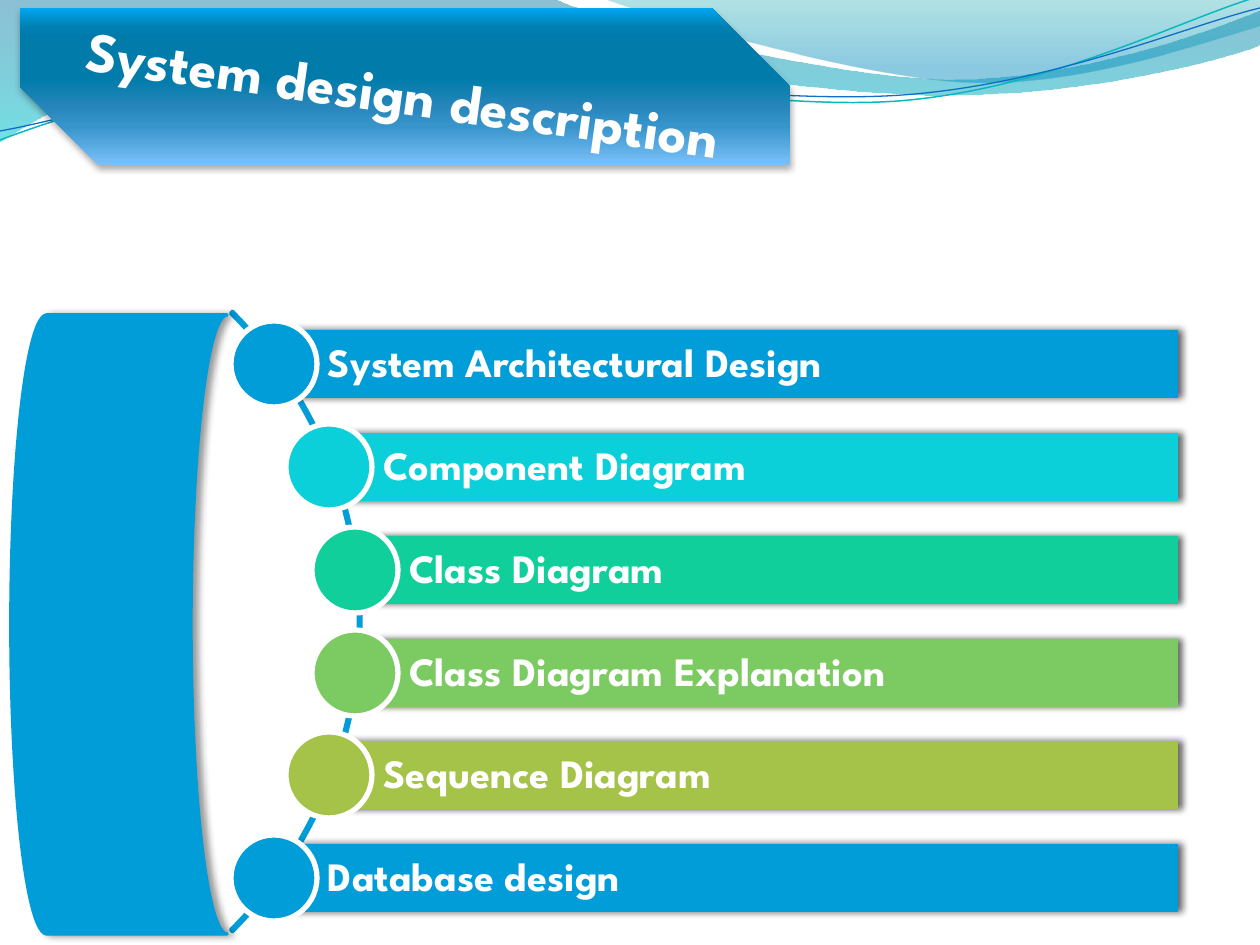
from lxml import etree
from pptx import Presentation
from pptx.dml.color import RGBColor
from pptx.enum.shapes import MSO_SHAPE
from pptx.enum.text import MSO_ANCHOR, PP_ALIGN
from pptx.oxml.ns import qn
from pptx.util import Emu, Pt

RECT, OVAL, ARC = MSO_SHAPE.RECTANGLE, MSO_SHAPE.OVAL, MSO_SHAPE.BLOCK_ARC
DRUM, PLATE = MSO_SHAPE.FLOWCHART_STORED_DATA, MSO_SHAPE.SNIP_2_DIAG_RECTANGLE
LEFT, CENTER, MIDDLE = PP_ALIGN.LEFT, PP_ALIGN.CENTER, MSO_ANCHOR.MIDDLE
SCALE = 914400 / 126
FONT = "League Spartan"
COLORS = {
    "white": "FFFFFF", "black": "000000", "blue": "009DD9", "cyan": "0BD0D9",
    "mint": "10CF9B", "green": "7CCA62", "olive": "A5C249",
    "teal line": "0AB8BF", "navy line": "0F6FC6",
}
# Gradient stops: position, colour, opacity (percent)
BAND = [(0, "0074A1", 45), (100, "00C6CF", 55)]
CREST = [(0, "00A1A9", 30), (80, "008BBF", 45)]
SHEEN = [(0, "7BC0F9", 100), (25, "3694CA", 100), (38, "2685BA", 100),
         (55, "007BAA", 100), (80, "007AA9", 100), (88, "0080B2", 100),
         (100, "00A7F1", 100)]
# Wave paths: a pair is a straight step, six numbers are a cubic curve
BAND_PATH = [(0, 0), (554, -1), (600, 21, 837, 79, 955, 79),
             (1074, 79, 1207, 33, 1260, 11), (1261, 45),
             (1239, 55, 1096, 96, 940, 95), (784, 95, 481, 35, 324, 43),
             (163, 45, 58, 105, -1, 142)]
CREST_PATH = [(604, -1), (642, 14, 859, 78, 969, 82),
              (1079, 87, 1211, 40, 1260, 26), (1260, 0)]
TEAL_PATH = [(0, 140), (60, 117, 199, 72, 349, 66),
             (498, 59, 747, 112, 898, 101), (1050, 89, 1182, 19, 1257, -3)]
NAVY_PATH = [(0, 131), (59, 121, 207, 77, 357, 71),
             (508, 64, 752, 106, 903, 95), (1053, 84, 1186, 26, 1260, 8)]
# Rows: text, colour, left edge of the bar
ROWS = [
    ("System Architectural Design", "blue", 274),
    ("Component Diagram", "cyan", 329),
    ("Class Diagram", "mint", 355),
    ("Class Diagram Explanation", "green", 355),
    ("Sequence Diagram", "olive", 329),
    ("Database design", "blue", 274),
]
TOP, PITCH, RIGHT, BAR, DOT = 330.2, 102.8, 1178, 68, 86


def px(n):
    return Emu(round(n * SCALE))


def rgb(name):
    return RGBColor.from_string(COLORS[name])


def style(shape, fill=None, line=None, width=0):
    shape.shadow.inherit = False
    if fill:
        shape.fill.solid()
        shape.fill.fore_color.rgb = rgb(fill)
    else:
        shape.fill.background()
    if line:
        shape.line.color.rgb = rgb(line)
        shape.line.width = Pt(width)
    else:
        shape.line.fill.background()


def add_form(slide, kind, box, fill=None, line=None, width=0):
    shape = slide.shapes.add_shape(kind, *map(px, box))
    style(shape, fill, line, width)
    return shape


def tint(node, color, alpha):
    item = etree.SubElement(node, qn("a:srgbClr"), val=color)
    if alpha < 100:
        etree.SubElement(item, qn("a:alpha"), val=str(alpha * 1000))


def blend(shape, stops, angle):
    """Replace the empty fill by a linear gradient."""
    old = shape.element.spPr.find(qn("a:noFill"))
    grad = etree.Element(qn("a:gradFill"), rotWithShape="1")
    group = etree.SubElement(grad, qn("a:gsLst"))
    for pos, color, alpha in stops:
        tint(etree.SubElement(group, qn("a:gs"), pos=str(pos * 1000)), color, alpha)
    etree.SubElement(grad, qn("a:lin"), ang=str(angle * 60000), scaled="0")
    old.getparent().replace(old, grad)


def cast(shape, alpha, blur, dist, angle=0):
    """Give the shape an outer shadow."""
    group = shape.element.spPr.find(qn("a:effectLst"))
    node = etree.SubElement(
        group, qn("a:outerShdw"), blurRad=str(Pt(blur)), dist=str(Pt(dist)),
        dir=str(angle * 60000), algn="ctr", rotWithShape="0")
    tint(node, COLORS["black"], alpha)


def bend(shape, steps):
    """Turn the straight segments of six-number steps into cubic curves."""
    lines = list(shape.element.iter(qn("a:lnTo")))
    for line, step in zip(lines, steps):
        if len(step) == 2:
            continue
        curve = etree.Element(qn("a:cubicBezTo"))
        for x, y in zip(step[::2], step[1::2]):
            etree.SubElement(curve, qn("a:pt"), x=str(px(x) - shape.left),
                             y=str(px(y) - shape.top))
        line.getparent().replace(line, curve)


def add_wave(slide, steps, stops=None, line=None, width=0):
    first, *rest = [tuple(map(px, step[-2:])) for step in steps]
    form = slide.shapes.build_freeform(*first)
    form.add_line_segments(rest, close=stops is not None)
    shape = form.convert_to_shape()
    bend(shape, steps[1:])
    style(shape, None, line, width)
    if stops:
        blend(shape, stops, 90)


def write(shape, text, size, align, inset=(0, 0, 0, 0), gap=1.0):
    frame = shape.text_frame
    frame.word_wrap = True
    frame.vertical_anchor = MIDDLE
    (frame.margin_left, frame.margin_top,
     frame.margin_right, frame.margin_bottom) = map(px, inset)
    para = frame.paragraphs[0]
    para.alignment = align
    para.line_spacing = gap
    run = para.add_run()
    run.text = text
    run.font.name, run.font.size, run.font.bold = FONT, Pt(size), True
    run.font.color.rgb = rgb("white")


def add_title(slide, text):
    plate = add_form(slide, PLATE, (20, 8, 770, 157))
    plate.adjustments[0], plate.adjustments[1] = 0, 0.5
    blend(plate, SHEEN, 270)
    cast(plate, 32, 3.5, 2.2, 90)
    title = slide.shapes.title
    title.left, title.top, title.width, title.height = map(px, (43, 53, 720, 80))
    title.rotation = 8
    write(title, text, 32, CENTER)
    plate.element.addnext(title.element)


def add_row(slide, top, text, color, left):
    box = (left, top, RIGHT - left, BAR)
    cast(add_form(slide, RECT, box, color), 60, 4, 2)
    label = slide.shapes.add_textbox(*map(px, box))
    write(label, text, 23, LEFT, (54, 7, 7, 7), 0.9)
    dot = (left - DOT / 2, top + (BAR - DOT) / 2, DOT, DOT)
    add_form(slide, OVAL, dot, color, "white", 3)


def main():
    deck = Presentation()
    deck.slide_width, deck.slide_height = px(1260), px(945)
    slide = deck.slides.add_slide(deck.slide_layouts[5])
    add_wave(slide, BAND_PATH, BAND)
    add_wave(slide, CREST_PATH, CREST)
    add_wave(slide, TEAL_PATH, line="teal line", width=0.85)
    add_wave(slide, NAVY_PATH, line="navy line", width=0.75)
    add_title(slide, "System design description")
    arc = add_form(slide, ARC, (-516, 183, 877, 877), line="blue", width=2)
    for i, value in enumerate((189, 27, 0.003)):
        arc.adjustments[i] = value
    for i, row in enumerate(ROWS):
        add_row(slide, round(TOP + i * PITCH), *row)
    drum = add_form(slide, DRUM, (11, 315, 216, 619), "blue", "blue", 2)
    cast(drum, 40, 4, 3)
    deck.save("out.pptx")


if __name__ == "__main__":
    main()
